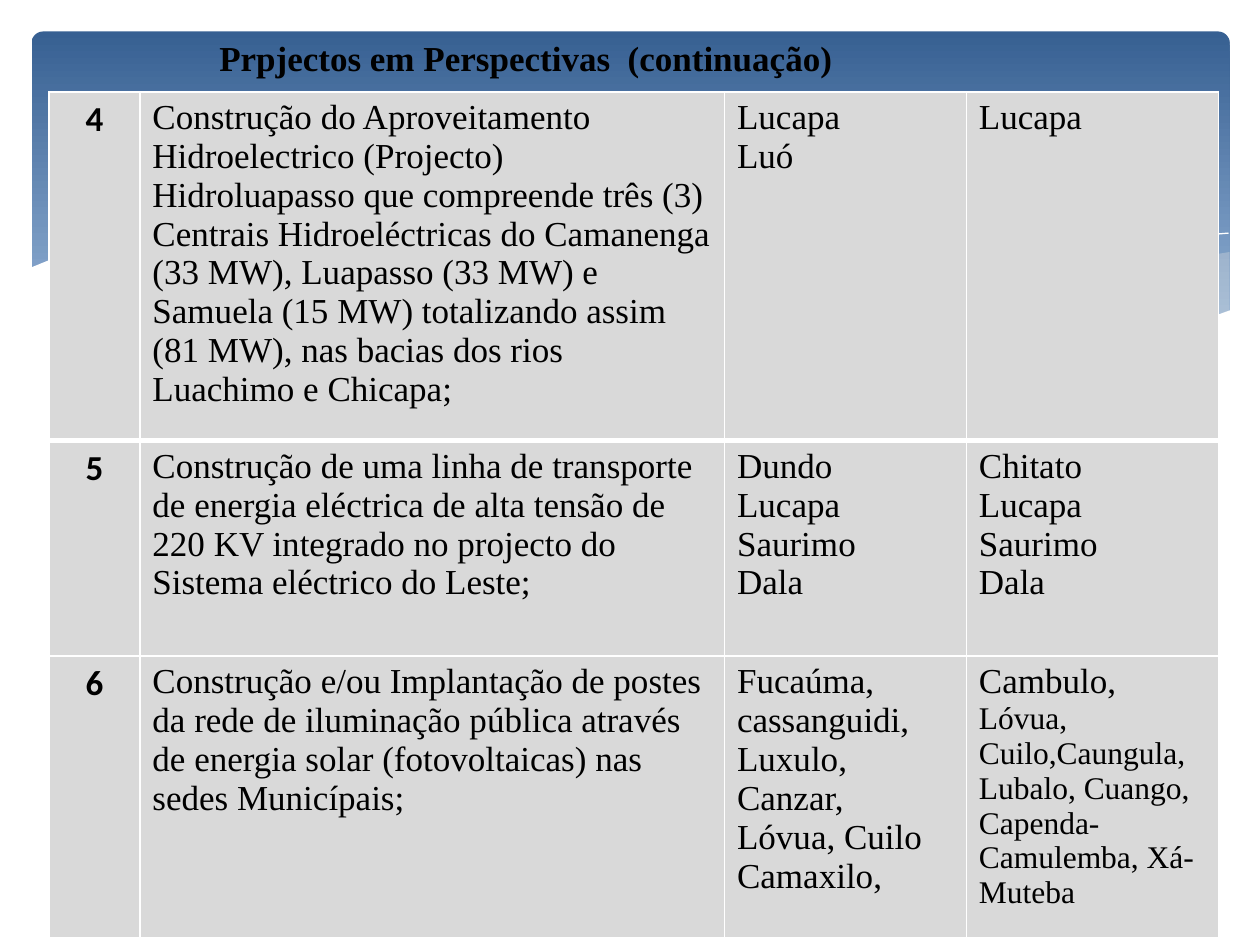
import pptx
import pptx.util
import pptx.dml.color
import pptx.enum.shapes
import pptx.enum.text
import pptx.oxml
import pptx.oxml.ns
import lxml.etree

Inches = pptx.util.Inches
Pt = pptx.util.Pt
steps_per_bend = 16
white, black, cream, gray = "FFFFFF", "000000", "EEECE1", "D9D9D9"
serif, sans = "Times New Roman", "Calibri"


def color(value):
    return pptx.dml.color.RGBColor.from_string(value)


def trace_bends(start, bends):
    points = [start]
    for first_pull, second_pull, end in bends:
        anchors = [points[-1], first_pull, second_pull, end]
        for step in range(1, steps_per_bend + 1):
            t = step / steps_per_bend
            weights = [(1 - t) ** 3, 3 * t * (1 - t) ** 2, 3 * t ** 2 * (1 - t), t ** 3]
            points.append(tuple(
                sum(weight * anchor[axis] for weight, anchor in zip(weights, anchors))
                for axis in (0, 1)))
    return points


deck = pptx.Presentation()
deck.slide_width = Inches(10)
deck.slide_height = Inches(7.5)
page = deck.slides.add_slide(deck.slide_layouts[5])

banner = page.shapes.add_shape(
    pptx.enum.shapes.MSO_SHAPE.ROUNDED_RECTANGLE,
    Inches(0.25), Inches(0.25), Inches(9.51), Inches(2.7))
banner.adjustments[0] = 0.034
banner.shadow.inherit = False
banner.line.fill.background()
banner.fill.gradient()
banner.fill.gradient_angle = 270
for stop, (position, shade) in zip(banner.fill.gradient_stops, [(0, "376092"), (0.9, "95B3D7")]):
    stop.position = position
    stop.color.rgb = color(shade)

right_wave = {
    "start": (9.76, 2), "fill": cream, "opacity": 29,
    "bends": [
        [(8.7, 2.17), (7.9, 2.44), (6.61, 2.65)],
        [(7.7, 2.81), (8.8, 2.88), (9.76, 2.47)]]}
middle_wave = {
    "start": (8.93, 2.73), "fill": cream, "opacity": 40,
    "bends": [
        [(8, 2.62), (7.2, 2.43), (6.29, 2.22)],
        [(5, 1.9), (3.9, 1.75), (2.86, 1.91)],
        [(3.4, 1.97), (4, 2.1), (4.49, 2.22)],
        [(6.2, 2.65), (7.4, 2.9), (8.93, 2.73)]]}
long_line = {
    "start": (3.09, 1.95), "line": white,
    "bends": [[(4.7, 1.7), (6.9, 2.09), (9.07, 2.72)]]}
right_line = {
    "start": (6.13, 2.57), "line": white,
    "bends": [[(7.3, 2.27), (8.6, 1.93), (9.75, 1.85)]]}
white_wave = {
    "start": (9.77, 2.46), "fill": white, "opacity": 100,
    "bends": [
        [(8.57, 2.93), (7.27, 2.84), (4.47, 2.2)],
        [(2.57, 1.76), (1.18, 1.7), (0.23, 2.13)]],
    "corners": [(0.23, 3.29), (9.77, 3.29)]}

for wave in (right_wave, middle_wave, long_line, right_line, white_wave):
    outline = trace_bends(wave["start"], wave["bends"]) + wave.get("corners", [])
    points = [(Inches(x), Inches(y)) for x, y in outline]
    builder = page.shapes.build_freeform(*points[0])
    builder.add_line_segments(points[1:], close="fill" in wave)
    curve = builder.convert_to_shape()
    curve.shadow.inherit = False
    if "line" in wave:
        curve.fill.background()
        curve.line.color.rgb = color(wave["line"])
        curve.line.width = Pt(0)
    else:
        curve.line.fill.background()
        curve.fill.solid()
        curve.fill.fore_color.rgb = color(wave["fill"])
        if wave["opacity"] < 100:
            shade = curve.element.find(".//" + pptx.oxml.ns.qn("a:solidFill"))[0]
            lxml.etree.SubElement(
                shade, pptx.oxml.ns.qn("a:alpha"), val=str(wave["opacity"] * 1000))

title = page.shapes.title
title.element.getparent().append(title.element)
for name, value in {"left": 1.64, "top": 0.24, "width": 7.52, "height": 0.43}.items():
    setattr(title, name, Inches(value))
title.text_frame.text = "Prpjectos em Perspectivas  (continuação)"
frame_format = {
    "word_wrap": True,
    "vertical_anchor": pptx.enum.text.MSO_ANCHOR.TOP,
    "auto_size": pptx.enum.text.MSO_AUTO_SIZE.SHAPE_TO_FIT_TEXT}
for name, value in frame_format.items():
    setattr(title.text_frame, name, value)
para = title.text_frame.paragraphs[0]
para.alignment = pptx.enum.text.PP_ALIGN.LEFT
for name, value in {"name": serif, "size": Pt(20), "bold": True}.items():
    setattr(para.font, name, value)
para.font.color.rgb = color(black)

projects = [
    ["4",
     "Construção do Aproveitamento Hidroelectrico (Projecto) Hidroluapasso que compreende "
     "três (3) Centrais Hidroeléctricas do Camanenga (33 MW), Luapasso (33 MW) e Samuela "
     "(15 MW) totalizando assim (81 MW), nas bacias dos rios Luachimo e Chicapa;",
     "Lucapa\nLuó", "Lucapa"],
    ["5",
     "Construção de uma linha de transporte de energia eléctrica de alta tensão de 220 KV "
     "integrado no projecto do Sistema eléctrico do Leste;",
     "Dundo\nLucapa\nSaurimo\nDala", "Chitato\nLucapa\nSaurimo\nDala"],
    ["6",
     "Construção e/ou Implantação de postes da rede de iluminação pública através de "
     "energia solar (fotovoltaicas) nas sedes Municípais;",
     "Fucaúma, cassanguidi, Luxulo, Canzar,\nLóvua, Cuilo\nCamaxilo,", "Cambulo, "]]
column_widths = [0.72, 4.64, 1.92, 2]
row_heights = [2.76, 1.71, 2.23]
table = page.shapes.add_table(
    len(row_heights), len(column_widths), Inches(0.39), Inches(0.73),
    Inches(sum(column_widths)), Inches(sum(row_heights))).table
table.horz_banding = False
for column, width in zip(table.columns, column_widths):
    column.width = Inches(width)
for row, height in zip(table.rows, row_heights):
    row.height = Inches(height)

number_font = {"name": sans, "size": Pt(20), "bold": True}
text_font = {"name": serif, "size": Pt(20), "bold": False}
thick_borders = [(0, "B"), (1, "T")]
for row_index, project in enumerate(projects):
    for column_index, text in enumerate(project):
        cell = table.cell(row_index, column_index)
        cell.text = text
        properties = cell._tc.get_or_add_tcPr()
        for side in "LRTB":
            width = Pt(3 if (row_index, side) in thick_borders else 1)
            properties.append(pptx.oxml.parse_xml(
                f'<a:ln{side} {pptx.oxml.ns.nsdecls("a")} w="{width}">'
                f'<a:solidFill><a:srgbClr val="{white}"/></a:solidFill></a:ln{side}>'))
        cell.fill.solid()
        cell.fill.fore_color.rgb = color(gray)
        is_number = column_index == 0
        for para in cell.text_frame.paragraphs:
            if is_number:
                para.alignment = pptx.enum.text.PP_ALIGN.CENTER
                indents = para._p.get_or_add_pPr()
                indents.set("marL", str(Inches(0.38)))
                indents.set("indent", str(-Inches(0.38)))
            for name, value in (number_font if is_number else text_font).items():
                setattr(para.font, name, value)
            para.font.color.rgb = color(black)

span = table.cell(2, 3).text_frame.paragraphs[0].add_run()
span.text = "Lóvua, Cuilo,Caungula, Lubalo, Cuango, Capenda-Camulemba, Xá-Muteba"
span.font.size = Pt(18)

deck.save("out.pptx")
